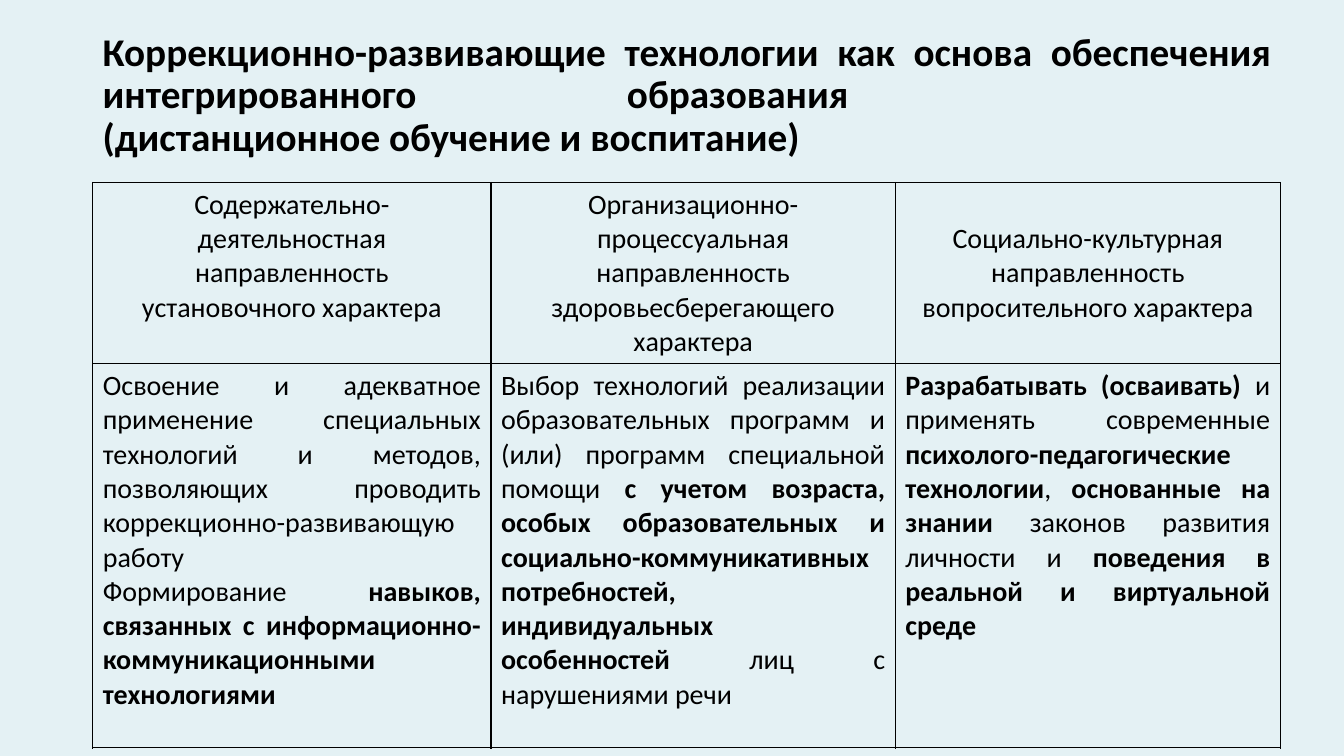
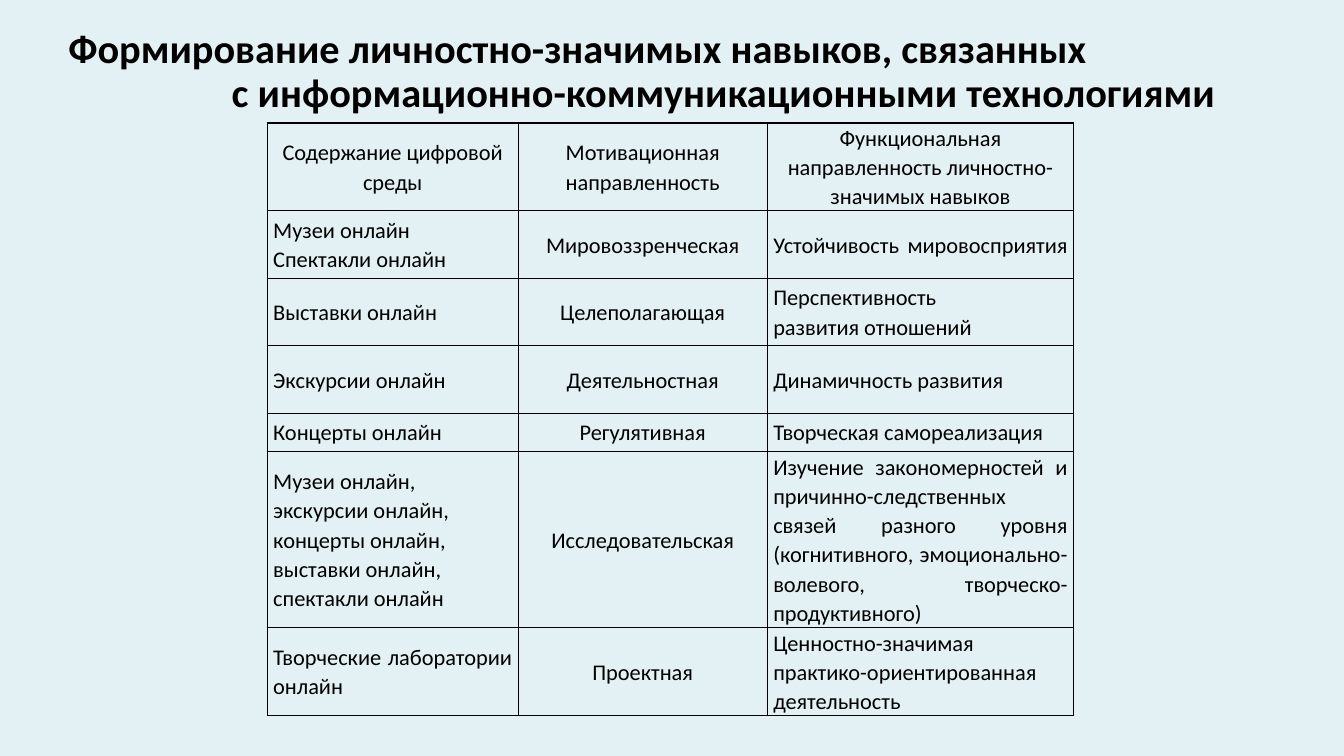
import pptx
import pptx.dml.color
import pptx.enum.text
import pptx.oxml
import pptx.oxml.ns
import pptx.util

ALIGN = pptx.enum.text.PP_ALIGN
ANCHOR = pptx.enum.text.MSO_ANCHOR
Inches = pptx.util.Inches
Pt = pptx.util.Pt

PALE_BLUE = pptx.dml.color.RGBColor(0xE4, 0xF1, 0xF4)
BLACK = pptx.dml.color.RGBColor(0x00, 0x00, 0x00)
FONT_NAME = "Calibri"
SLIDE_SIZE = (13.33, 7.5)
BOLD_MARK = "**"

DIRECTIONS_TITLE = [
    "Коррекционно-развивающие технологии как основа обеспечения "
    "интегрированного\tобразования\v(дистанционное обучение и воспитание)",
]
DIRECTIONS = [
    [
        "Содержательно-деятельностная направленность\nустановочного характера",
        "Организационно-процессуальная направленность\nздоровьесберегающего характера",
        "Социально-культурная направленность вопросительного характера",
    ],
    [
        "Освоение и адекватное применение специальных технологий и методов, "
        "позволяющих проводить коррекционно-развивающую работу\n"
        "Формирование **навыков, связанных с информационно-коммуникационными технологиями**",
        "Выбор технологий реализации образовательных программ и (или) программ "
        "специальной помощи **с учетом возраста, особых образовательных и "
        "социально-коммуникативных потребностей, индивидуальных особенностей **"
        "лиц с нарушениями речи",
        "**Разрабатывать (осваивать) **и применять современные "
        "**психолого-педагогические технологии**, **основанные на знании **"
        "законов развития личности и **поведения в реальной и виртуальной среде**",
    ],
]

SKILLS_TITLE = [
    "Формирование личностно-значимых навыков, связанных",
    "с информационно-коммуникационными технологиями",
]
SKILLS = [
    ["Содержание цифровой среды", "Мотивационная направленность",
     "Функциональная направленность личностно-значимых навыков"],
    ["Музеи онлайн\nСпектакли онлайн", "Мировоззренческая", "Устойчивость мировосприятия "],
    ["Выставки онлайн", "Целеполагающая", "Перспективность\nразвития отношений"],
    ["Экскурсии онлайн", "Деятельностная", "Динамичность развития"],
    ["Концерты онлайн", "Регулятивная", "Творческая самореализация"],
    ["Музеи онлайн,\nэкскурсии онлайн,\nконцерты онлайн,\nвыставки онлайн,\nспектакли онлайн",
     "Исследовательская",
     "Изучение закономерностей и причинно-следственных связей разного уровня "
     "(когнитивного, эмоционально-волевого, творческо-продуктивного)"],
    ["Творческие лаборатории онлайн", "Проектная",
     "Ценностно-значимая практико-ориентированная деятельность"],
]


def apply_format(target, values):
    for attribute, value in values.items():
        setattr(target, attribute, value)


def write_paragraphs(frame, lines, size, paragraph_format, bold=False):
    for index, line in enumerate(lines):
        paragraph = frame.paragraphs[0] if index == 0 else frame.add_paragraph()
        apply_format(paragraph, paragraph_format)
        for part, text in enumerate(line.split(BOLD_MARK)):
            for piece, words in enumerate(text.split("\v")):
                if piece:
                    paragraph.add_line_break()
                if words:
                    run = paragraph.add_run()
                    run.text = words
                    apply_format(run.font, {"name": FONT_NAME, "size": Pt(size),
                                            "bold": bold or part % 2 == 1})
                    run.font.color.rgb = BLACK


def add_title(slide, box, lines, size, align):
    frame = slide.shapes.add_textbox(*map(Inches, box)).text_frame
    apply_format(frame, {"word_wrap": True, "vertical_anchor": ANCHOR.MIDDLE})
    write_paragraphs(frame, lines, size, {"alignment": align, "line_spacing": 0.9}, bold=True)
    return frame


def set_tab_stop(paragraph, position):
    properties = paragraph._p.get_or_add_pPr()
    properties.append(pptx.oxml.parse_xml(
        f'<a:tabLst {pptx.oxml.ns.nsdecls("a")}>'
        f'<a:tab pos="{Inches(position)}" algn="l"/></a:tabLst>'))


def outline_cell(cell):
    properties = cell._tc.get_or_add_tcPr()
    for side in ("lnL", "lnR", "lnT", "lnB"):
        properties.append(pptx.oxml.parse_xml(
            f'<a:{side} {pptx.oxml.ns.nsdecls("a")} w="{Pt(1)}">'
            f'<a:solidFill><a:srgbClr val="{BLACK}"/></a:solidFill></a:{side}>'))
    cell.fill.background()


def add_grid(slide, box, column_widths, row_heights, content, size, spacing,
             cell_format, centred_columns=()):
    table = slide.shapes.add_table(
        len(row_heights), len(column_widths), *map(Inches, box)).table
    apply_format(table, {"first_row": False, "horz_banding": False})
    for column, share in zip(table.columns, column_widths):
        column.width = Inches(box[2] * share / sum(column_widths))
    for row, share in zip(table.rows, row_heights):
        row.height = Inches(box[3] * share / sum(row_heights))
    for row_index, texts in enumerate(content):
        for column_index, text in enumerate(texts):
            cell = table.cell(row_index, column_index)
            outline_cell(cell)
            apply_format(cell, cell_format)
            centred = row_index == 0 or column_index in centred_columns
            align = ALIGN.CENTER if centred else ALIGN.JUSTIFY
            write_paragraphs(cell.text_frame, text.split("\n"), size,
                             {"alignment": align, "line_spacing": spacing})
    return table


def add_slide(presentation):
    slide = presentation.slides.add_slide(presentation.slide_layouts[6])
    fill = slide.background.fill
    fill.solid()
    fill.fore_color.rgb = PALE_BLUE
    return slide


def build_directions(presentation):
    slide = add_slide(presentation)
    title = add_title(slide, (0.92, 0.43, 11.78, 1.05), DIRECTIONS_TITLE, 28, ALIGN.JUSTIFY)
    set_tab_stop(title.paragraphs[0], 5.2)
    grid = add_grid(slide, (0.92, 1.81, 11.78, 5.61), (3.95, 4.01, 3.82), (1.8, 3.81),
                    DIRECTIONS, 20, 1.0, {"vertical_anchor": ANCHOR.TOP})
    grid.cell(0, 2).vertical_anchor = ANCHOR.MIDDLE


def build_skills(presentation):
    slide = add_slide(presentation)
    title = add_title(slide, (0.58, 0.22, 12.13, 1), SKILLS_TITLE, 28.8, ALIGN.LEFT)
    title.paragraphs[1]._p.get_or_add_pPr().set("marL", str(Inches(1.62)))
    add_grid(slide, (2.65, 1.22, 8, 5.88), (2.49, 2.47, 3.04),
             (0.87, 0.67, 0.67, 0.67, 0.38, 1.75, 0.87), SKILLS, 16, 1.07,
             {"vertical_anchor": ANCHOR.MIDDLE, "margin_left": Inches(0.06),
              "margin_right": Inches(0.06), "margin_top": 0, "margin_bottom": 0},
             centred_columns=(1,))


def main():
    presentation = pptx.Presentation()
    width, height = map(Inches, SLIDE_SIZE)
    apply_format(presentation, {"slide_width": width, "slide_height": height})
    build_directions(presentation)
    build_skills(presentation)
    presentation.save("out.pptx")


if __name__ == "__main__":
    main()
